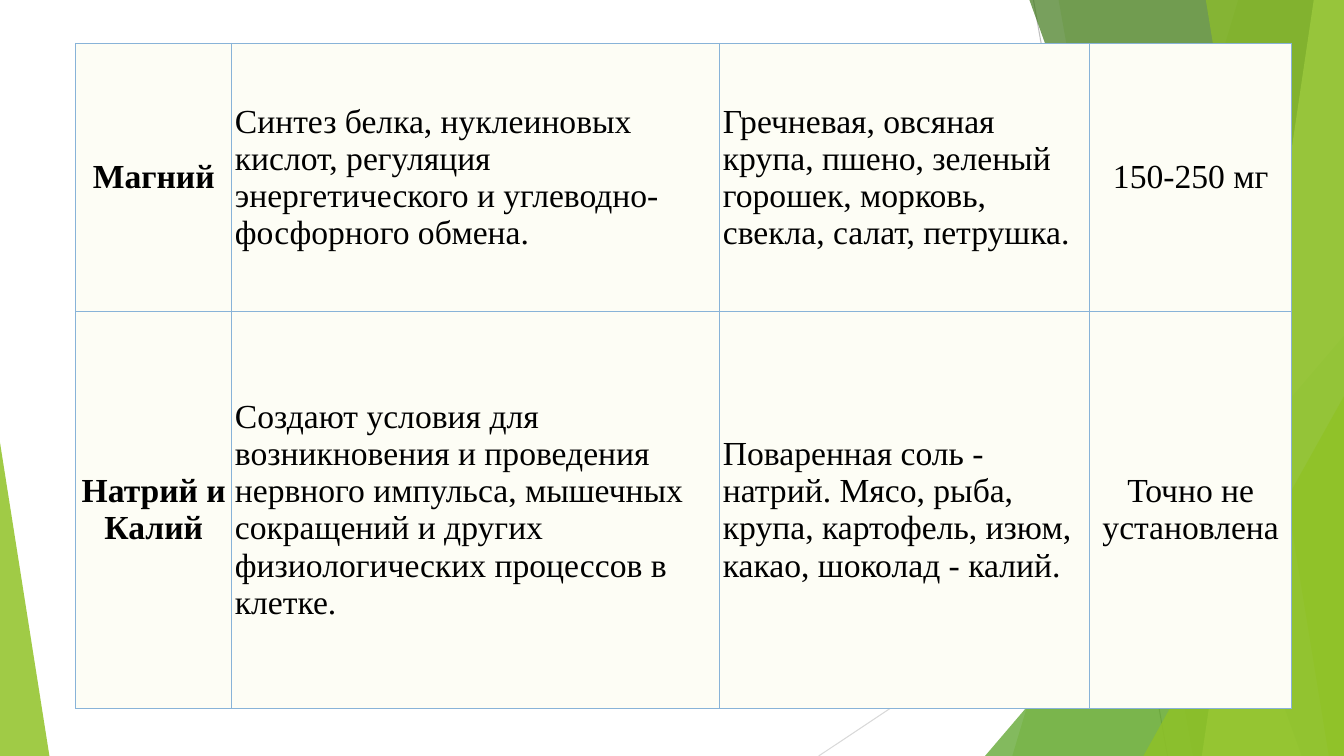
from lxml.etree import SubElement
from pptx import Presentation
from pptx.dml.color import RGBColor
from pptx.enum.shapes import MSO_CONNECTOR, MSO_SHAPE
from pptx.enum.text import MSO_ANCHOR, PP_ALIGN
from pptx.oxml.ns import qn
from pptx.util import Inches, Pt

WIDTH, HEIGHT = 13.33, 7.5
LIME = RGBColor(0x90, 0xC2, 0x26)
GREEN = RGBColor(0x54, 0xA0, 0x21)
FOREST = RGBColor(0x3F, 0x78, 0x19)
PALE_LIME = RGBColor(0xC0, 0xE4, 0x74)
GRAY = RGBColor(0xBF, 0xBF, 0xBF)
LIGHT_GRAY = RGBColor(0xD9, 0xD9, 0xD9)
CREAM = RGBColor(0xFD, 0xFD, 0xF5)
BLUE = RGBColor(0x88, 0xB3, 0xD8)
BLACK = RGBColor(0, 0, 0)

RAYS = [
    ((10.25, 0), (11.58, HEIGHT), GRAY),
    ((WIDTH, 4.03), (8.12, HEIGHT), LIGHT_GRAY),
]
BACK_BANDS = [(12.28, 10.04, LIME, 30), (10.5, 11.83, LIME, 20)]
FRONT_BANDS = [
    (10.21, 12.91, FOREST, 70),
    (13.03, 11.92, PALE_LIME, 70),
    (11.96, 13.18, LIME, 65),
]
COLUMNS = [1.55, 4.84, 3.67, 2]
ROWS = [2.66, 3.94]
MINERALS = [
    [
        "Магний",
        "Синтез белка, нуклеиновых кислот, регуляция энергетического и углеводно-фосфорного обмена.",
        "Гречневая, овсяная крупа, пшено, зеленый горошек, морковь, свекла, салат, петрушка.",
        "150-250 мг",
    ],
    [
        "Натрий и Калий",
        "Создают условия для возникновения и проведения нервного импульса, мышечных сокращений "
        "и других физиологических процессов в клетке.",
        "Поваренная соль - натрий. Мясо, рыба, крупа, картофель, изюм, какао, шоколад - калий.",
        "Точно не установлена",
    ],
]


class SlideBuilder:
    """Draws styled elements on the current slide."""

    cell_format = {
        "vertical_anchor": MSO_ANCHOR.MIDDLE,
        "margin_left": Inches(0.03),
        "margin_right": Inches(0.03),
        "margin_top": Inches(0.03),
        "margin_bottom": Inches(0.03),
    }
    font_format = {"name": "Times New Roman", "size": Pt(24)}
    line_width = Pt(0.75)

    def __init__(self, page):
        self.page = page
        self.shapes = page.shapes

    def apply(self, target, values):
        for name, value in values.items():
            setattr(target, name, value)

    def paint(self, shape, color, opacity):
        shape.shadow.inherit = False
        shape.line.fill.background()
        shape.fill.solid()
        shape.fill.fore_color.rgb = color
        tint = shape.fill._xPr.find(qn("a:solidFill"))[0]
        SubElement(tint, qn("a:alpha"), val=str(opacity * 1000))

    def ray(self, start, end, color):
        points = [Inches(value) for value in (*start, *end)]
        line = self.shapes.add_connector(MSO_CONNECTOR.STRAIGHT, *points)
        line.line.color.rgb = color
        line.line.width = self.line_width
        SubElement(line._element.spPr, qn("a:effectLst"))

    def band(self, top, bottom, color, opacity):
        corners = [(top, 0), (WIDTH, 0), (WIDTH, HEIGHT), (bottom, HEIGHT)]
        points = [(Inches(x), Inches(y)) for x, y in corners]
        builder = self.shapes.build_freeform(*points[0])
        builder.add_line_segments(points[1:], close=True)
        self.paint(builder.convert_to_shape(), color, opacity)

    def triangle(self, left, width, height, apex, color, opacity):
        box = [Inches(value) for value in (left, HEIGHT - height, width, height)]
        shape = self.shapes.add_shape(MSO_SHAPE.ISOSCELES_TRIANGLE, *box)
        shape.adjustments[0] = apex
        self.paint(shape, color, opacity)

    def cell(self, cell, text, centered, bold):
        self.apply(cell, self.cell_format)
        properties = cell._tc.get_or_add_tcPr()
        for side in "LRTB":
            border = SubElement(properties, qn(f"a:ln{side}"), w=str(self.line_width))
            fill = SubElement(border, qn("a:solidFill"))
            SubElement(fill, qn("a:srgbClr"), val=str(BLUE))
        cell.fill.solid()
        cell.fill.fore_color.rgb = CREAM
        para = cell.text_frame.paragraphs[0]
        para.alignment = PP_ALIGN.CENTER if centered else PP_ALIGN.LEFT
        span = para.add_run()
        span.text = text
        self.apply(span.font, {**self.font_format, "bold": bold})
        span.font.color.rgb = BLACK

    def table(self, left, top, widths, heights, content):
        box = [Inches(value) for value in (left, top, sum(widths), sum(heights))]
        table = self.shapes.add_table(len(heights), len(widths), *box).table
        self.apply(table, {"first_row": False, "horz_banding": False})
        for column, width in zip(table.columns, widths):
            column.width = Inches(width)
        last = len(widths) - 1
        for row, height, texts in zip(table.rows, heights, content):
            row.height = Inches(height)
            for index, text in enumerate(texts):
                self.cell(row.cells[index], text, index in (0, last), index == 0)


def main():
    deck = Presentation()
    deck.slide_width, deck.slide_height = Inches(WIDTH), Inches(HEIGHT)
    builder = SlideBuilder(deck.slides.add_slide(deck.slide_layouts[6]))
    for ray in RAYS:
        builder.ray(*ray)
    for band in BACK_BANDS:
        builder.band(*band)
    builder.triangle(9.77, 3.56, 4.17, 1, GREEN, 72)
    for band in FRONT_BANDS:
        builder.band(*band)
    builder.triangle(11.34, 1.99, 3.57, 1, LIME, 80)
    builder.triangle(0, 0.49, 3.11, 0, LIME, 85)
    builder.table(0.75, 0.43, COLUMNS, ROWS, MINERALS)
    deck.save("out.pptx")


if __name__ == "__main__":
    main()
